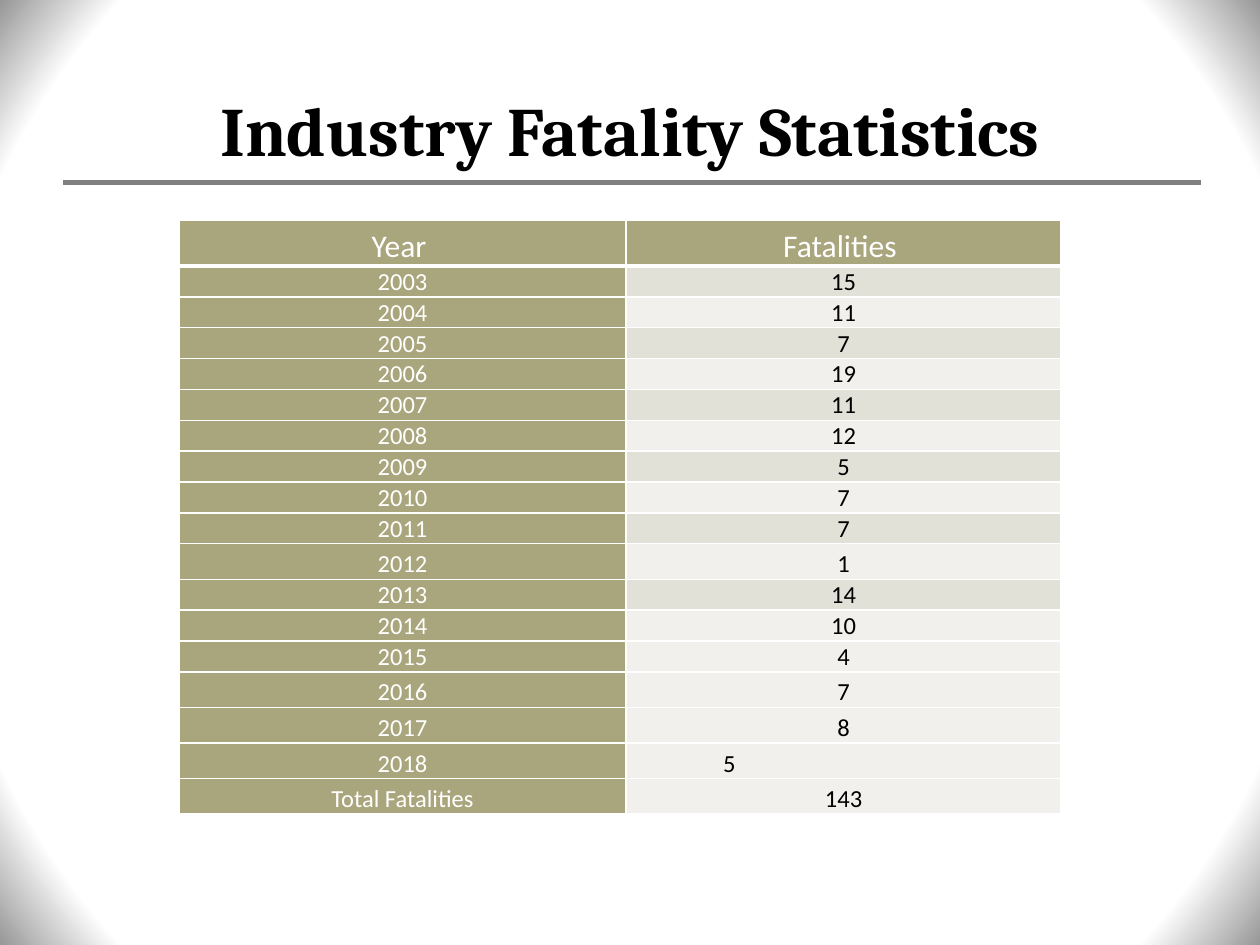
import pptx
import pptx.util
import pptx.dml.color
import pptx.enum.shapes
import pptx.enum.text
import pptx.oxml
import pptx.oxml.ns

Inches, Pt = pptx.util.Inches, pptx.util.Pt
RGB = pptx.dml.color.RGBColor
ALIGN, ANCHOR = pptx.enum.text.PP_ALIGN, pptx.enum.text.MSO_ANCHOR
NS = pptx.oxml.ns.nsdecls("a")

WHITE = RGB(0xFF, 0xFF, 0xFF)
BLACK = RGB(0x00, 0x00, 0x00)
EDGE = RGB(0x97, 0x97, 0x97)
GRAY = RGB(0x80, 0x80, 0x80)
OLIVE = RGB(0xA9, 0xA5, 0x7C)
DARK = RGB(0xE2, 0xE1, 0xD7)
LIGHT = RGB(0xF1, 0xF0, 0xEC)


def write(frame, text, size=14, font="Calibri", color=BLACK, bold=False,
          align=ALIGN.CENTER, space=None):
    par = frame.paragraphs[0]
    par.alignment = align
    par.line_spacing = space
    run = par.add_run()
    run.text = text
    run.font.size = Pt(size)
    run.font.name = font
    run.font.bold = bold
    run.font.color.rgb = color


def border(cell, **widths):
    """Draw white cell borders; widths in points, keyed L, R, T, B."""
    props = cell._tc.get_or_add_tcPr()
    for i, (side, width) in enumerate(widths.items()):
        props.insert(i, pptx.oxml.parse_xml(
            f'<a:ln{side} {NS} w="{Pt(width)}"><a:solidFill>'
            f'<a:srgbClr val="{WHITE}"/></a:solidFill></a:ln{side}>'))


prs = pptx.Presentation()
prs.slide_width, prs.slide_height = Inches(10), Inches(7.5)
slide = prs.slides.add_slide(prs.slide_layouts[5])

# Background: white centre, grey corners
fill = slide.background.fill
fill.gradient()
for stop, place, color in zip(fill.gradient_stops, (0.88, 1), (WHITE, EDGE)):
    stop.position = place
    stop.color.rgb = color
grad = slide.background._cSld.find(".//" + pptx.oxml.ns.qn("a:gradFill"))
grad.replace(grad.find(pptx.oxml.ns.qn("a:lin")), pptx.oxml.parse_xml(
    f'<a:path {NS} path="circle">'
    '<a:fillToRect l="50000" t="50000" r="50000" b="50000"/></a:path>'))

# Title and rule
title = slide.shapes.title
title.left, title.top = Inches(0.5), Inches(0.5)
title.width, title.height = Inches(9), Inches(0.95)
title.text_frame.vertical_anchor = ANCHOR.BOTTOM
title.text_frame.margin_bottom = Inches(0.1)
write(title.text_frame, "Industry Fatality Statistics", size=39.6,
      font="Cambria", bold=True)

rule = slide.shapes.add_connector(
    pptx.enum.shapes.MSO_CONNECTOR.STRAIGHT,
    Inches(0.5), Inches(1.45), Inches(9.53), Inches(1.45))
rule.line.color.rgb = GRAY
rule.line.width = Pt(3)
rule._element.spPr.append(pptx.oxml.parse_xml(f"<a:effectLst {NS}/>"))

# Table
counts = [15, 11, 7, 19, 11, 12, 5, 7, 7, 1, 14, 10, 4, 7, 8, 5]
rows = [("Year ", "Fatalities ")]
rows += [(str(2003 + i), str(n)) for i, n in enumerate(counts)]
rows += [("Total Fatalities", str(sum(counts)))]
tall = {"2012", "2016", "2017", "2018", "Total Fatalities"}

table = slide.shapes.add_table(len(rows), 2, Inches(1.42), Inches(1.75),
                               Inches(7), Inches(4.71)).table
table.first_row = table.horz_banding = False
table.columns[0].width, table.columns[1].width = Inches(3.55), Inches(3.45)

for r, row in enumerate(rows):
    head = r == 0
    loose = head or row[0] in tall
    table.rows[r].height = Inches(0.36 if head else 0.28 if loose else 0.24)
    for c, text in enumerate(row):
        cell = table.cell(r, c)
        label = head or c == 0
        shift = c == 1 and row[0] == "2018"
        band = DARK if r % 2 and r < 12 else LIGHT
        cell.fill.solid()
        cell.fill.fore_color.rgb = OLIVE if label else band
        cell.vertical_anchor = ANCHOR.MIDDLE
        cell.margin_left = Inches(0.77 if shift else 0.07)
        cell.margin_right = Inches(0.07)
        cell.margin_top, cell.margin_bottom = Inches(0.01), 0
        border(cell, L=1, R=1, T=3 if r == 1 else 1, B=3 if head else 1)
        write(cell.text_frame, text, size=18 if head else 14,
              color=WHITE if label else BLACK,
              align=ALIGN.LEFT if shift else ALIGN.CENTER,
              space=1.15 if loose else Pt(16.9))

prs.save("out.pptx")
